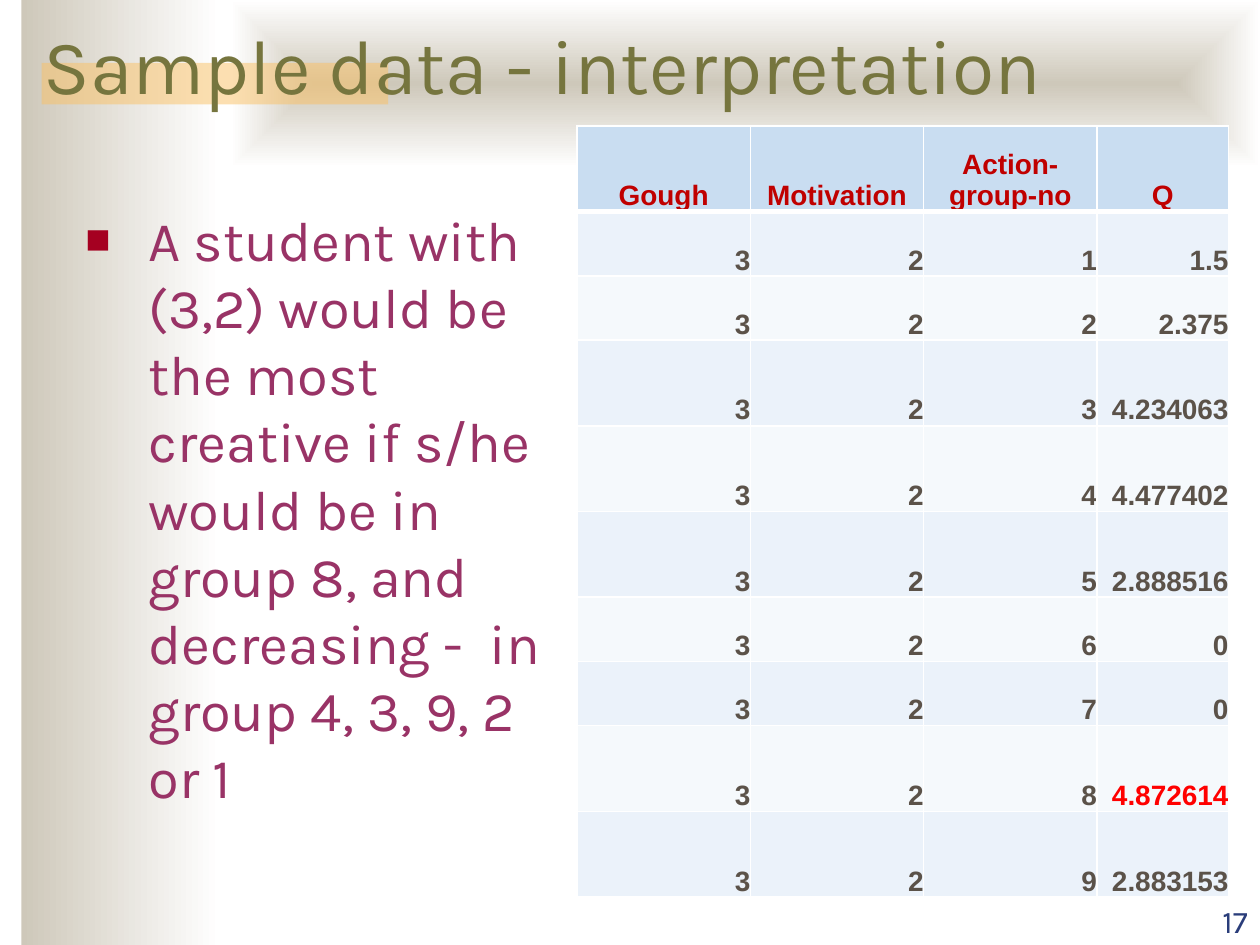
from lxml.etree import SubElement
from pptx import Presentation
from pptx.dml.color import RGBColor
from pptx.enum.shapes import MSO_SHAPE
from pptx.enum.text import MSO_ANCHOR, PP_ALIGN
from pptx.oxml.ns import qn
from pptx.util import Inches, Pt

WHITE = RGBColor(0xFF, 0xFF, 0xFF)
SAND = RGBColor(0xCE, 0xC8, 0xBA)
ORANGE = RGBColor(0xFA, 0xC1, 0x64)
OLIVE = RGBColor(0x76, 0x75, 0x3E)
PLUM = RGBColor(0x99, 0x33, 0x66)
CRIMSON = RGBColor(0xA5, 0x00, 0x21)
NAVY = RGBColor(0x2A, 0x3D, 0x7A)
HEADER_RED = RGBColor(0xC0, 0x00, 0x00)
HIGHLIGHT_RED = RGBColor(0xFF, 0x00, 0x00)
BROWN = RGBColor(0x5B, 0x52, 0x49)
HEADER_BLUE = RGBColor(0xC9, 0xDD, 0xF1)
BAND_BLUES = (RGBColor(0xEB, 0xF2, 0xFA), RGBColor(0xF5, 0xF9, 0xFC))

HEADERS = ("Gough", "Motivation", "Action-group-no", "Q")
Q_VALUES = ("1.5", "2.375", "4.234063", "4.477402", "2.888516",
            "0", "0", "4.872614", "2.883153")
BEST_GROUP = 8
COLUMN_SHARES = (1.37, 1.37, 1.37, 1.04)
ROW_SHARES = (4, 3, 3, 4, 4, 4, 3, 3, 4, 4)


def write_text(frame, text, font="Karla", size=18, color=NAVY, bold=False,
               align=PP_ALIGN.LEFT, anchor=MSO_ANCHOR.TOP):
    frame.word_wrap = True
    frame.vertical_anchor = anchor
    paragraph = frame.paragraphs[0]
    paragraph.alignment = align
    run = paragraph.add_run()
    run.text = text
    run.font.name = font
    run.font.size = Pt(size)
    run.font.bold = bold
    run.font.color.rgb = color
    return paragraph


def add_text_box(slide, box, text, **text_format):
    shape = slide.shapes.add_textbox(*map(Inches, box))
    return write_text(shape.text_frame, text, **text_format)


def add_rectangle(slide, box):
    shape = slide.shapes.add_shape(MSO_SHAPE.RECTANGLE, *map(Inches, box))
    shape.shadow.inherit = False
    shape.line.fill.background()
    return shape


def add_gradient_rectangle(slide, box, from_center=False):
    """Fade from sand to white, left to right or outwards from the center."""
    shape = add_rectangle(slide, box)
    shape.fill.gradient()
    shape.fill.gradient_angle = 0
    for stop, color, position in zip(shape.fill.gradient_stops, (SAND, WHITE), (0, 1)):
        stop.color.rgb = color
        stop.position = position
    if from_center:
        gradient = shape._element.spPr.find(qn("a:gradFill"))
        gradient.remove(gradient.find(qn("a:lin")))
        outward = SubElement(gradient, qn("a:path"), path="shape")
        SubElement(outward, qn("a:fillToRect"), l="50000", t="50000", r="50000", b="50000")


def add_backdrop(slide, width, height):
    add_gradient_rectangle(slide, (0.17, 0, 1.58, height))
    add_gradient_rectangle(slide, (1.83, 0, width - 1.83, 1.33), from_center=True)
    accent = add_rectangle(slide, (0.33, 0.5, 2.75, 0.33))
    accent.fill.solid()
    accent.fill.fore_color.rgb = ORANGE
    color = accent._element.spPr.find(qn("a:solidFill"))[0]
    SubElement(color, qn("a:alpha"), val="50000")


def add_bullet_text(slide, box, text):
    paragraph = add_text_box(slide, box, text, size=32, color=PLUM)
    properties = paragraph._p.get_or_add_pPr()
    properties.set("marL", str(Inches(0.5)))
    properties.set("indent", str(-Inches(0.5)))
    bullet_color = SubElement(properties, qn("a:buClr"))
    SubElement(bullet_color, qn("a:srgbClr"), val=str(CRIMSON))
    SubElement(properties, qn("a:buSzPct"), val="75000")
    SubElement(properties, qn("a:buFont"), typeface="Arial")
    SubElement(properties, qn("a:buChar"), char="■")


def add_cell_borders(cell, bottom_width):
    properties = cell._tc.get_or_add_tcPr()
    for side, width in (("L", 1), ("R", 1), ("T", 1), ("B", bottom_width)):
        line = SubElement(properties, qn(f"a:ln{side}"), w=str(Pt(width)))
        fill = SubElement(line, qn("a:solidFill"))
        SubElement(fill, qn("a:srgbClr"), val=str(WHITE))


def fill_cell(cell, text, fill, color, align, bottom_width=1):
    add_cell_borders(cell, bottom_width)
    cell.fill.solid()
    cell.fill.fore_color.rgb = fill
    cell.margin_left = cell.margin_right = cell.margin_top = cell.margin_bottom = 0
    cell.vertical_anchor = MSO_ANCHOR.BOTTOM
    write_text(cell.text_frame, text, font="Arial", size=16, color=color,
               bold=True, align=align, anchor=None)


def add_score_table(slide, box):
    left, top, width, height = box
    table = slide.shapes.add_table(len(ROW_SHARES), len(HEADERS), *map(Inches, box)).table
    for column, share in zip(table.columns, COLUMN_SHARES):
        column.width = Inches(width * share / sum(COLUMN_SHARES))
    for row, share in zip(table.rows, ROW_SHARES):
        row.height = Inches(height * share / sum(ROW_SHARES))
    for column, header in enumerate(HEADERS):
        fill_cell(table.cell(0, column), header, HEADER_BLUE, HEADER_RED,
                  PP_ALIGN.CENTER, bottom_width=3)
    for group, q_value in enumerate(Q_VALUES, start=1):
        band = BAND_BLUES[(group - 1) % 2]
        for column, value in enumerate(("3", "2", str(group), q_value)):
            is_best = group == BEST_GROUP and HEADERS[column] == "Q"
            fill_cell(table.cell(group, column), value, band,
                      HIGHLIGHT_RED if is_best else BROWN, PP_ALIGN.RIGHT)


def main():
    width, height = 10, 7.5
    presentation = Presentation()
    presentation.slide_width = Inches(width)
    presentation.slide_height = Inches(height)
    slide = presentation.slides.add_slide(presentation.slide_layouts[6])
    add_backdrop(slide, width, height)
    add_text_box(slide, (0.25, 0, 8.5, 0.92), "Sample data - interpretation",
                 size=44, color=OLIVE, anchor=MSO_ANCHOR.BOTTOM)
    add_bullet_text(slide, (0.58, 1.58, 4, 5.5),
                    "A student with (3,2) would be the most creative if s/he would be "
                    "in group 8, and decreasing -  in group 4, 3, 9, 2 or 1")
    add_text_box(slide, (9, 7.01, 1, 0.5), "17",
                 align=PP_ALIGN.RIGHT, anchor=MSO_ANCHOR.BOTTOM)
    add_score_table(slide, (4.58, 1, 5.17, 6.12))
    presentation.save("out.pptx")


if __name__ == "__main__":
    main()
